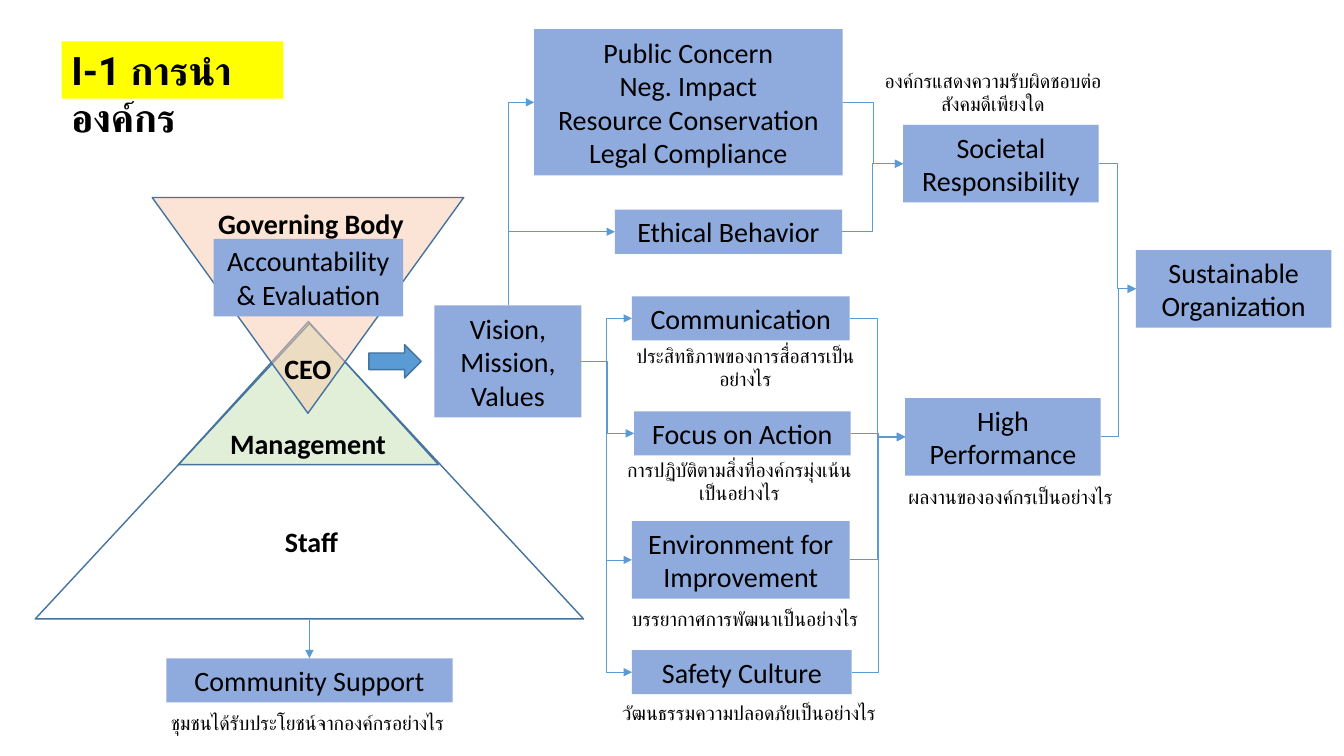
from dataclasses import dataclass

from lxml.etree import SubElement
from pptx import Presentation
from pptx.dml.color import RGBColor as RGB
from pptx.enum.shapes import MSO_CONNECTOR as LINK, MSO_SHAPE as SHAPE
from pptx.enum.text import MSO_ANCHOR as ANCHOR, PP_ALIGN as ALIGN
from pptx.oxml.ns import qn
from pptx.util import Pt


@dataclass(frozen=True)
class Theme:
    text: RGB = RGB(0x00, 0x00, 0x00)
    box: RGB = RGB(0x8F, 0xAA, 0xDC)
    accent: RGB = RGB(0x5B, 0x9B, 0xD5)
    outline: RGB = RGB(0x43, 0x73, 0x9E)
    board: RGB = RGB(0xF8, 0xCB, 0xAD)
    managers: RGB = RGB(0xC5, 0xE0, 0xB4)
    highlight: RGB = RGB(0xFF, 0xFF, 0x00)
    body_font: str = "Calibri"
    note_font: str = "Karla"
    title_font: str = "Roboto"
    body_size: int = 20
    note_size: int = 14
    title_size: int = 28


@dataclass(frozen=True)
class Box:
    x: float
    y: float
    w: float
    h: float

    def at(self, x, y, w, h):
        return Pt(self.x + x), Pt(self.y + y), Pt(w), Pt(h)


THEME = Theme()
LINE_H, TWO_LINE_H = 31.5, 55.4
NOTE_H, TWO_NOTE_H = 24.5, 41
TOP, LEFT, RIGHT = 0, 1, 3


def write(shape, text, font, size, bold=False, align=ALIGN.CENTER, anchor=ANCHOR.MIDDLE):
    tf = shape.text_frame
    tf.text = text
    tf.word_wrap = True
    tf.vertical_anchor = anchor
    for p in tf.paragraphs:
        p.alignment = align
        for r in p.runs:
            r.font.name = font
            r.font.size = Pt(size)
            r.font.bold = bold
            r.font.color.rgb = THEME.text


def add_block(s, kind, place, fill=None, outline=None, opacity=None):
    sp = s.shapes.add_shape(kind, *place)
    sp.shadow.inherit = False
    if fill is None:
        sp.fill.background()
    else:
        sp.fill.solid()
        sp.fill.fore_color.rgb = fill
    if opacity is not None:
        color = sp._element.spPr.find(qn("a:solidFill")).find(qn("a:srgbClr"))
        SubElement(color, qn("a:alpha"), val=str(opacity * 1000))
    if outline is None:
        sp.line.fill.background()
    else:
        sp.line.color.rgb = outline
        sp.line.width = Pt(1)
    return sp


def add_box(s, place, text):
    sp = add_block(s, SHAPE.RECTANGLE, place, THEME.box)
    write(sp, text, THEME.body_font, THEME.body_size)
    return sp


def add_label(s, place, text):
    sp = s.shapes.add_textbox(*place)
    write(sp, text, THEME.body_font, THEME.body_size, bold=True, anchor=ANCHOR.TOP)


def add_note(s, place, text):
    sp = s.shapes.add_textbox(*place)
    write(sp, text, THEME.note_font, THEME.note_size, anchor=ANCHOR.TOP)


def style_link(link, arrow_at="tailEnd"):
    link.line.color.rgb = THEME.accent
    link.line.width = Pt(0.5)
    spPr = link._element.spPr
    SubElement(spPr.find(qn("a:ln")), qn(f"a:{arrow_at}"), type="triangle")
    SubElement(spPr, qn("a:effectLst"))


def join(s, source, target):
    link = s.shapes.add_connector(LINK.ELBOW, 0, 0, 0, 0)
    link.begin_connect(source, RIGHT)
    link.end_connect(target, LEFT)
    style_link(link)


def join_from_top(s, source, target):
    start = target.left, target.top + target.height // 2
    end = source.left + source.width // 2, source.top
    link = s.shapes.add_connector(LINK.ELBOW, *start, *end)
    link._element.spPr.find(qn("a:prstGeom")).set("prst", "bentConnector2")
    link.begin_connect(target, LEFT)
    link.end_connect(source, TOP)
    style_link(link, "headEnd")


def draw_title(s, area):
    sp = add_block(s, SHAPE.RECTANGLE, area.at(0, 0, area.w, area.h), THEME.highlight)
    write(sp, "I-1 การนำองค์กร", THEME.title_font, THEME.title_size, True, ALIGN.LEFT, ANCHOR.TOP)


def draw_pyramid(s, area):
    for kind, place, fill in (
        (SHAPE.FLOWCHART_EXTRACT, (102.4, 88.7, 185.8, 102.2), THEME.managers),
        (SHAPE.ISOSCELES_TRIANGLE, (0.2, 90.1, 391.7, 211), None),
        (SHAPE.FLOWCHART_MERGE, (83.7, 0.1, 222.5, 154.1), THEME.board),
    ):
        add_block(s, kind, area.at(*place), fill, THEME.outline, 50 if fill else None)
    for text, x, y, w in (
        ("CEO", 163.6, 106.7, 62.6),
        ("Governing Body", 119.7, 3, 154.8),
        ("Management", 117.6, 160, 154.8),
        ("Staff", 119.7, 229.8, 155.5),
    ):
        add_label(s, area.at(x, y, w, LINE_H), text)
    add_box(s, area.at(127.6, 29.6, 135.4, TWO_LINE_H), "Accountability & Evaluation")
    add_block(s, SHAPE.RIGHT_ARROW, area.at(238.5, 105.2, 37.4, 23.8), THEME.accent, THEME.outline)

    community = add_box(s, area.at(93.8, 329.2, 204.5, LINE_H), "Community Support")
    add_note(s, area.at(70, 363, 249.1, NOTE_H), "ชุมชนได้รับประโยชน์จากองค์กรอย่างไร")
    middle = community.left + community.width // 2
    link = s.shapes.add_connector(LINK.STRAIGHT, middle, Pt(area.y + 301.1), middle, community.top)
    link.end_connect(community, TOP)
    style_link(link)


def draw_ethics(s, area):
    concern = "Public Concern\nNeg. Impact\nResource Conservation\nLegal Compliance"
    return [
        add_box(s, area.at(0, 0, area.w, 104.4), concern),
        add_box(s, area.at(57.6, 128.9, 162.3, LINE_H), "Ethical Behavior"),
    ]


def draw_drivers(s, area):
    drivers = []
    for text, x, y, w, h, note, note_x, note_y, note_w, note_h in (
        ("Communication", 28, 0, 155.5, LINE_H,
         "ประสิทธิภาพของการสื่อสารเป็นอย่างไร", 17.2, 30.2, 183.6, TWO_NOTE_H),
        ("Focus on Action", 29.5, 82.1, 154.8, LINE_H,
         "การปฏิบัติตามสิ่งที่องค์กรมุ่งเน้นเป็นอย่างไร", 12.9, 111.6, 183.6, TWO_NOTE_H),
        ("Environment for Improvement", 28, 160.5, 155.5, TWO_LINE_H,
         "บรรยากาศการพัฒนาเป็นอย่างไร", 7.9, 218.1, 201.6, NOTE_H),
        ("Safety Culture", 28, 252.7, 157, LINE_H,
         "วัฒนธรรมความปลอดภัยเป็นอย่างไร", 0, 285.1, 223.2, NOTE_H),
    ):
        drivers.append(add_box(s, area.at(x, y, w, h), text))
        add_note(s, area.at(note_x, note_y, note_w, note_h), note)
    return drivers


def draw_outcomes(s, area):
    add_note(s, area.at(0, 0, 185.8, TWO_NOTE_H), "องค์กรแสดงความรับผิดชอบต่อสังคมดีเพียงใด")
    add_note(s, area.at(13.7, 297.3, 183.6, NOTE_H), "ผลงานขององค์กรเป็นอย่างไร")
    return [
        add_box(s, area.at(x, y, 139.7, TWO_LINE_H), text)
        for text, x, y in (
            ("Societal Responsibility", 28.8, 43.9),
            ("High Performance", 30.3, 239),
            ("Sustainable Organization", 195.1, 133.2),
        )
    ]


def main():
    prs = Presentation()
    prs.slide_width, prs.slide_height = Pt(960), Pt(540)
    s = prs.slides.add_slide(prs.slide_layouts[6])

    draw_pyramid(s, Box(25, 141, 392, 388))
    vision = add_box(s, Box(310.3, 218.2, 105.1, 79.9).at(0, 0, 105.1, 79.9), "Vision, Mission, Values")
    ethics = draw_ethics(s, Box(381.6, 20.9, 220.3, 160.4))
    drivers = draw_drivers(s, Box(423.4, 211.7, 223.2, 309.6))
    societal, performance, sustainable = draw_outcomes(s, Box(616.3, 45.4, 334.8, 321.8))
    draw_title(s, Box(44, 29.5, 158.4, 41))

    for box in ethics:
        join_from_top(s, vision, box)
        join(s, box, societal)
    for box in drivers:
        join(s, vision, box)
        join(s, box, performance)
    for box in (societal, performance):
        join(s, box, sustainable)

    prs.save("out.pptx")


if __name__ == "__main__":
    main()
